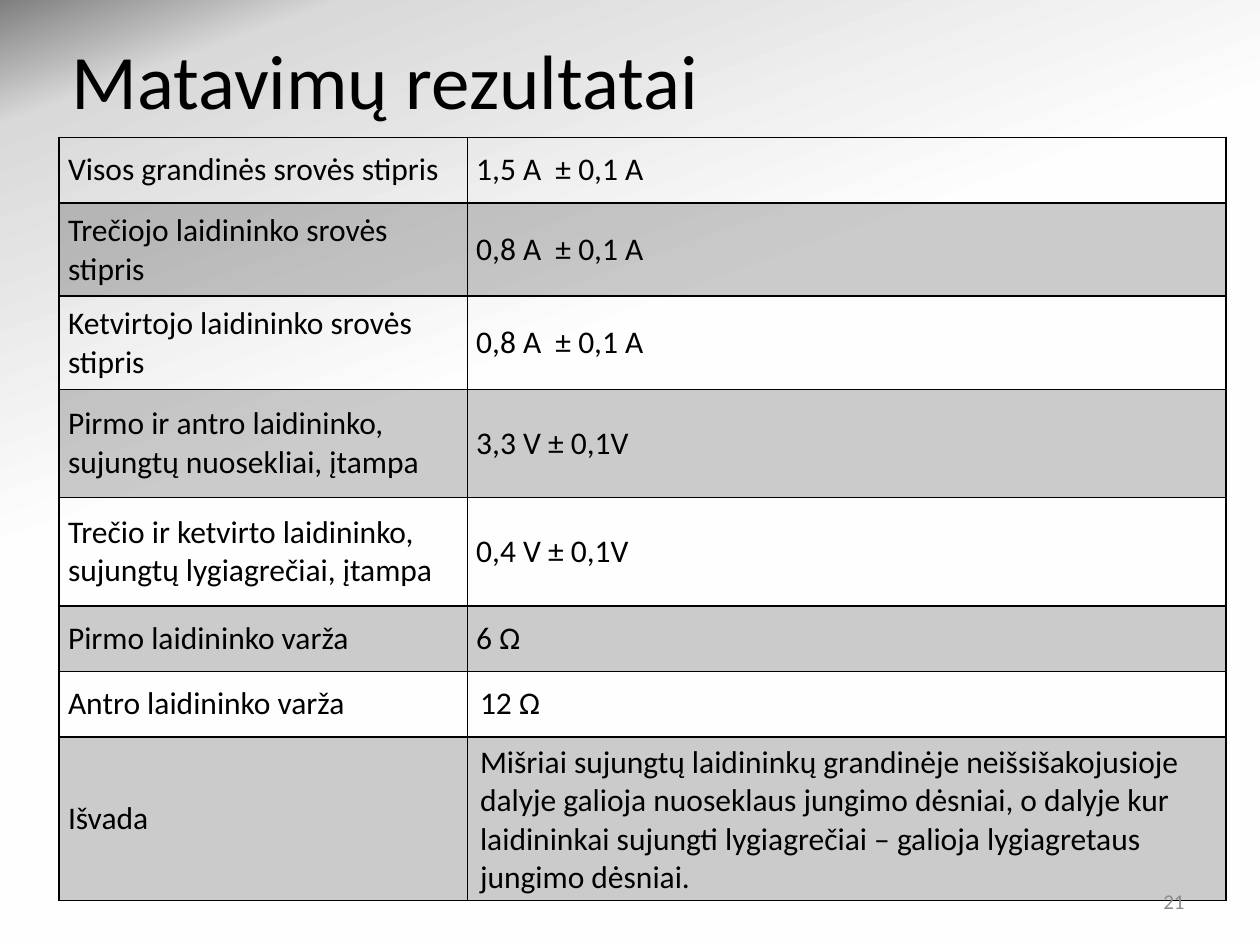
from copy import deepcopy

from lxml.etree import SubElement
from pptx import Presentation
from pptx.dml.color import RGBColor
from pptx.enum.text import MSO_ANCHOR as Anchor, PP_ALIGN as Align
from pptx.oxml.ns import qn
from pptx.util import Inches, Pt

FONT = "Calibri"
BLACK = RGBColor(0x00, 0x00, 0x00)
NUMBER_GRAY = RGBColor(0x8C, 0x8C, 0x8C)
BACKGROUND_STOPS = [
    (0, RGBColor(0x7F, 0x7F, 0x7F)),
    (0.09, RGBColor(0xD9, 0xD9, 0xD9)),
    (0.4, RGBColor(0xFE, 0xFE, 0xFE)),
]
BACKGROUND_ANGLE = 290  # counter-clockwise, as python-pptx counts it

WIDTH, HEIGHT = Inches(10), Inches(7.5)
LEFT = 0.047 * WIDTH
COLUMN_WIDTHS = [3.24, 6.02]
ROW, TALL_ROW, CONCLUSION_ROW = 0.52, 0.86, 1.14
TIGHT, NORMAL = 0.07, 0.1  # side margins of a cell

# label, value, row height, side margin of the value
RESULTS = [
    ("Visos grandinės srovės stipris", "1,5 A  ± 0,1 A", ROW, TIGHT),
    ("Trečiojo laidininko srovės stipris", "0,8 A  ± 0,1 A", ROW, TIGHT),
    ("Ketvirtojo laidininko srovės stipris", "0,8 A  ± 0,1 A", ROW, TIGHT),
    ("Pirmo ir antro laidininko, sujungtų nuosekliai, įtampa",
     "3,3 V ± 0,1V", TALL_ROW, TIGHT),
    ("Trečio ir ketvirto laidininko, sujungtų lygiagrečiai, įtampa",
     "0,4 V ± 0,1V", TALL_ROW, TIGHT),
    ("Pirmo laidininko varža", "6 Ω", ROW, TIGHT),
    ("Antro laidininko varža", "12 Ω", ROW, NORMAL),
    ("Išvada",
     "Mišriai sujungtų laidininkų grandinėje neišsišakojusioje dalyje galioja "
     "nuoseklaus jungimo dėsniai, o dalyje kur laidininkai sujungti "
     "lygiagrečiai – galioja lygiagretaus jungimo dėsniai.",
     CONCLUSION_ROW, NORMAL),
]


def set_background(slide):
    fill = slide.background.fill
    fill.gradient()
    fill.gradient_angle = BACKGROUND_ANGLE
    stop_list = slide.element.find(".//" + qn("a:gsLst"))
    stop_list.append(deepcopy(stop_list[0]))
    for stop, (position, color) in zip(fill.gradient_stops, BACKGROUND_STOPS):
        stop.position = position
        stop.color.rgb = color


def style_paragraph(paragraph, size, color=BLACK, alignment=Align.LEFT):
    paragraph.alignment = alignment
    paragraph.font.name = FONT
    paragraph.font.size = Pt(size)
    paragraph.font.color.rgb = color


def add_text(slide, text, left, top, width, height, size, **style):
    shape = slide.shapes.add_textbox(
        *(round(length) for length in (left, top, width, height)))
    frame = shape.text_frame
    frame.word_wrap = True
    frame.vertical_anchor = Anchor.MIDDLE
    frame.text = text
    style_paragraph(frame.paragraphs[0], size, **style)


def add_borders(cell):
    properties = cell._tc.get_or_add_tcPr()
    for side in ("L", "R", "T", "B"):
        line = SubElement(properties, qn(f"a:ln{side}"), w=str(Pt(1)))
        solid = SubElement(line, qn("a:solidFill"))
        SubElement(solid, qn("a:srgbClr"), val=str(BLACK))


def shade(cell, opacity):
    cell.fill.solid()
    cell.fill.fore_color.rgb = BLACK
    color = cell._tc.tcPr.find(qn("a:solidFill"))[0]
    SubElement(color, qn("a:alpha"), val=str(opacity * 1000))


def fill_cell(cell, text, margin, shaded):
    cell.text = text
    cell.vertical_anchor = Anchor.MIDDLE
    cell.margin_left = cell.margin_right = Inches(margin)
    cell.margin_top = cell.margin_bottom = Inches(min(margin, 0.07) if margin == TIGHT else 0.05)
    style_paragraph(cell.text_frame.paragraphs[0], 18)
    add_borders(cell)
    if shaded:
        shade(cell, 20)
    else:
        cell.fill.background()


def add_results_table(slide):
    heights = [height for _, _, height, _ in RESULTS]
    table = slide.shapes.add_table(
        len(RESULTS), len(COLUMN_WIDTHS), round(LEFT), Inches(1.09),
        Inches(sum(COLUMN_WIDTHS)), Inches(sum(heights))).table
    table.first_row = table.horz_banding = False
    for column, width in zip(table.columns, COLUMN_WIDTHS):
        column.width = Inches(width)
    for index, (label, value, height, margin) in enumerate(RESULTS):
        table.rows[index].height = Inches(height)
        shaded = index % 2 == 1
        fill_cell(table.cell(index, 0), label, TIGHT, shaded)
        fill_cell(table.cell(index, 1), value, margin, shaded)


def main():
    presentation = Presentation()
    presentation.slide_width, presentation.slide_height = WIDTH, HEIGHT
    slide = presentation.slides.add_slide(presentation.slide_layouts[6])
    set_background(slide)
    add_text(slide, "Matavimų rezultatai",
             LEFT, 0, 0.9 * WIDTH, HEIGHT / 6, 44)
    add_results_table(slide)
    add_text(slide, "21", 0.717 * WIDTH, 0.927 * HEIGHT, 0.233 * WIDTH,
             0.053 * HEIGHT, 12, color=NUMBER_GRAY, alignment=Align.RIGHT)
    presentation.save("out.pptx")


if __name__ == "__main__":
    main()
